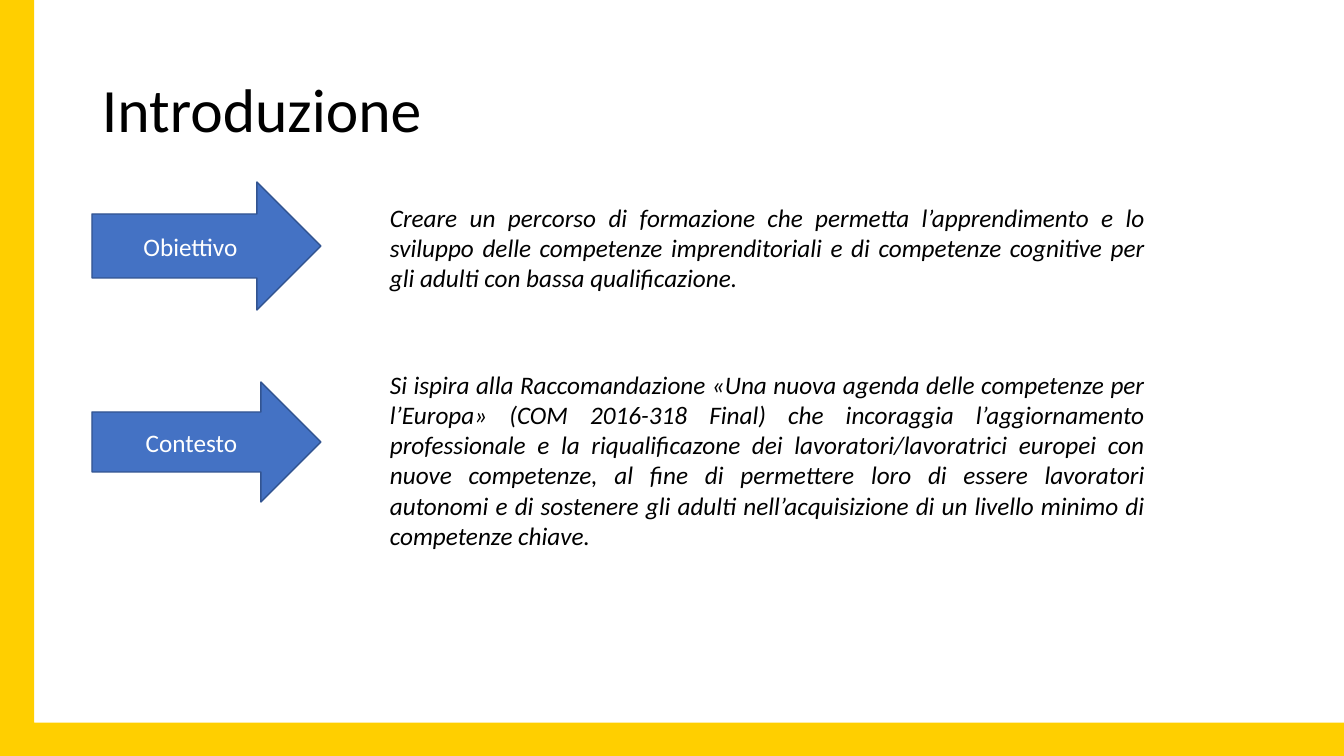
from dataclasses import dataclass

from pptx import Presentation
from pptx.dml.color import RGBColor
from pptx.enum.shapes import MSO_SHAPE
from pptx.enum.text import MSO_ANCHOR, PP_ALIGN
from pptx.slide import Slide
from pptx.text.text import TextFrame
from pptx.util import Emu, Pt

EMU_PER_PX = 914400 / 100.8
PAGE_WIDTH, PAGE_HEIGHT = 1344, 756

FONT = "Calibri"
YELLOW = RGBColor(0xFF, 0xCF, 0x00)
BLUE = RGBColor(0x44, 0x72, 0xC4)
DARK_BLUE = RGBColor(0x32, 0x54, 0x91)
BLACK = RGBColor(0x00, 0x00, 0x00)
WHITE = RGBColor(0xFF, 0xFF, 0xFF)

ARROW_LEFT, ARROW_WIDTH = 92, 229
BODY_LEFT, BODY_WIDTH = 380, 775


@dataclass(frozen=True)
class Topic:
    label: str
    arrow_top: int
    arrow_height: int
    body: str
    body_top: int
    body_height: int


TOPICS = [
    Topic(
        "Obiettivo", 182, 128,
        "Creare un percorso di formazione che permetta l’apprendimento e lo "
        "sviluppo delle competenze imprenditoriali e di competenze cognitive "
        "per gli adulti con bassa qualificazione.",
        197, 102,
    ),
    Topic(
        "Contesto", 382, 120,
        "Si ispira alla Raccomandazione «Una nuova agenda delle competenze per "
        "l’Europa» (COM 2016-318 Final) che incoraggia l’aggiornamento "
        "professionale e la riqualificazone dei lavoratori/lavoratrici europei "
        "con nuove competenze, al fine di permettere loro di essere lavoratori "
        "autonomi e di sostenere gli adulti nell’acquisizione di un livello "
        "minimo di competenze chiave.",
        364, 194,
    ),
]


def px(length: int) -> Emu:
    return Emu(round(length * EMU_PER_PX))


def write(frame: TextFrame, text: str, size: int, color: RGBColor,
          align: PP_ALIGN = PP_ALIGN.LEFT, anchor: MSO_ANCHOR = MSO_ANCHOR.MIDDLE,
          italic: bool = False) -> None:
    frame.word_wrap = True
    frame.vertical_anchor = anchor
    frame.text = text
    para = frame.paragraphs[0]
    para.alignment = align
    font = para.runs[0].font
    font.name = FONT
    font.size = Pt(size)
    font.italic = italic
    font.color.rgb = color


def draw_frame(page: Slide) -> None:
    corner = page.shapes.add_shape(
        MSO_SHAPE.CORNER, 0, 0, px(PAGE_WIDTH), px(PAGE_HEIGHT))
    corner.adjustments[0] = 0.044
    corner.adjustments[1] = 0.045
    corner.shadow.inherit = False
    corner.fill.solid()
    corner.fill.fore_color.rgb = YELLOW
    corner.line.fill.background()


def draw_title(page: Slide) -> None:
    box = page.shapes.add_textbox(px(92), px(40), px(1159), px(146))
    write(box.text_frame, "Introduzione", 44, BLACK)
    box.text_frame.paragraphs[0].line_spacing = 0.9


def draw_topic(page: Slide, topic: Topic) -> None:
    arrow = page.shapes.add_shape(
        MSO_SHAPE.RIGHT_ARROW, px(ARROW_LEFT), px(topic.arrow_top),
        px(ARROW_WIDTH), px(topic.arrow_height))
    arrow.shadow.inherit = False
    arrow.fill.solid()
    arrow.fill.fore_color.rgb = BLUE
    arrow.line.color.rgb = DARK_BLUE
    arrow.line.width = Pt(1)
    write(arrow.text_frame, topic.label, 18, WHITE, PP_ALIGN.CENTER)

    box = page.shapes.add_textbox(
        px(BODY_LEFT), px(topic.body_top), px(BODY_WIDTH), px(topic.body_height))
    write(box.text_frame, topic.body, 18, BLACK, PP_ALIGN.JUSTIFY,
          MSO_ANCHOR.TOP, italic=True)


def main() -> None:
    deck = Presentation()
    deck.slide_width = px(PAGE_WIDTH)
    deck.slide_height = px(PAGE_HEIGHT)
    page = deck.slides.add_slide(deck.slide_layouts[6])

    # Yellow border and title
    draw_frame(page)
    draw_title(page)

    # Labelled arrows with their descriptions
    for topic in TOPICS:
        draw_topic(page, topic)

    deck.save("out.pptx")


if __name__ == "__main__":
    main()
